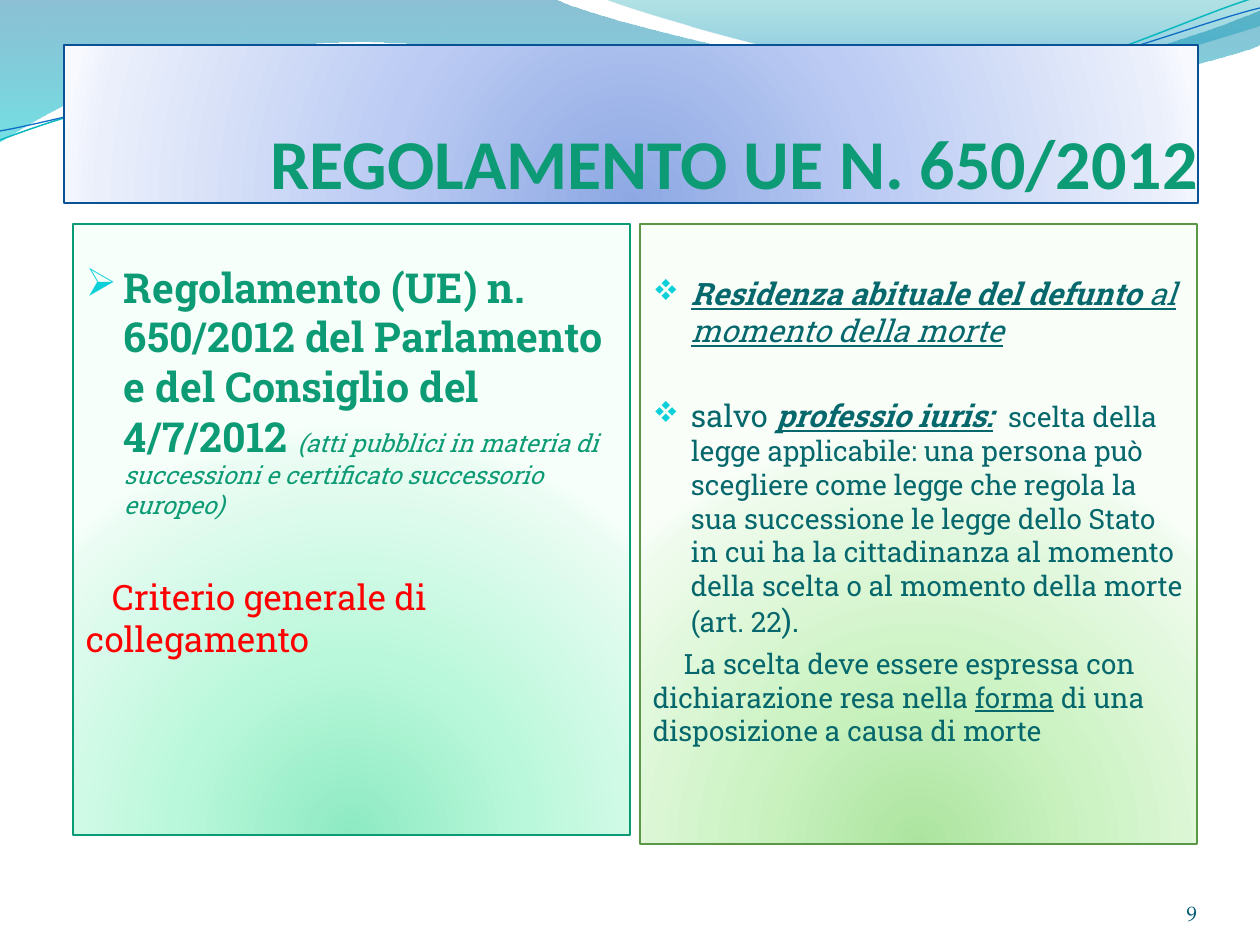
from lxml.etree import SubElement
from pptx import Presentation
from pptx.dml.color import RGBColor
from pptx.enum.shapes import MSO_SHAPE
from pptx.enum.text import MSO_ANCHOR as ANCHOR, PP_ALIGN as ALIGN
from pptx.oxml.ns import qn
from pptx.util import Pt

PX = 914400 / 126
BULLET_INDENT = 38

COLORS = {"title": "0C9B74", "body": "06686C", "alert": "FF0000",
          "number": "045D75", "bullet": "0BD0D9"}
SLAB = "Roboto Slab"
ARROW, DIAMONDS = "Ø", "v"  # Wingdings characters

# Gradient stops: position %, colour, opacity %
# Parts: a straight line (x, y) or a cubic curve (x1, y1, x2, y2, x, y)
WAVES = [
    {"start": (0, 0), "stops": [(0, "0074A1", 45), (100, "00C6CF", 55)],
     "parts": [(554, -1), (600, 21, 837, 79, 955, 79), (1075, 79, 1207, 33, 1260, 11),
               (1261, 45), (1239, 55, 1096, 96, 940, 95), (784, 95, 481, 35, 324, 43),
               (163, 45, 58, 105, -1, 142)]},
    {"start": (604, -1), "stops": [(0, "00A1A9", 30), (80, "008BBF", 45)],
     "parts": [(643, 15, 859, 78, 969, 82), (1079, 87, 1211, 40, 1260, 26), (1260, 0)]},
    {"start": (0, 140), "line": ("0AB8BF", 0.85),
     "parts": [(60, 117, 199, 72, 349, 66), (498, 59, 747, 112, 898, 101),
               (1050, 89, 1182, 19, 1257, -3)]},
    {"start": (0, 131), "line": ("0F6FC6", 0.75),
     "parts": [(59, 121, 207, 77, 357, 71), (508, 64, 752, 106, 903, 95),
               (1053, 84, 1186, 26, 1260, 8)]},
]

TITLE = {
    "box": (64, 45, 1134, 158), "line": "095295", "insets": (0, 6, 0, 0),
    "stops": [(0, "8DA8E3", 100), (43, "BBCBF3", 100), (93, "EAEFFB", 100), (100, "F7F9FF", 100)],
    "text": "REGOLAMENTO UE N. 650/2012",
}

# Runs: text, size in pt, style letters (b, i, u)
PANELS = [
    {"box": (73, 224, 557, 611), "line": "0A9B74", "insets": (13, 38, 13, 6),
     "stops": [(0, "8DEAC2", 100), (43, "BAF8DB", 100), (93, "EAFCF3", 100), (100, "F7FFFB", 100)],
     "paragraphs": [
         {"bullet": ARROW, "color": "title", "runs": [
             ("Regolamento (UE) n. 650/2012 del Parlamento e del Consiglio del 4/7/2012 ", 23.6, "b"),
             ("(atti pubblici in materia di successioni e certificato successorio europeo)", 14, "i")]},
         {"first": 26, "before": 32, "color": "alert", "runs": [
             ("Criterio generale di collegamento", 20, "")]},
     ]},
    {"box": (640, 224, 557, 620), "line": "5B9747", "insets": (13, 51, 13, 6),
     "stops": [(0, "ACE49F", 100), (43, "CDF3C4", 100), (93, "EFFBED", 100), (100, "F9FFF8", 100)],
     "paragraphs": [
         {"bullet": DIAMONDS, "color": "body", "runs": [
             ("Residenza abituale del defunto ", 17.6, "biu"),
             ("al momento della morte", 17.6, "iu")]},
         {"bullet": DIAMONDS, "before": 27.5, "color": "body", "runs": [
             ("salvo ", 17.6, ""), ("professio iuris:", 17.6, "biu"), ("  ", 17.6, "bi"),
             ("scelta della legge applicabile: una persona può scegliere come legge che "
              "regola la sua successione le legge dello Stato in cui ha la cittadinanza al "
              "momento della scelta o al momento della morte (art. 22", 16, ""),
             (").", 17.6, "")]},
         {"first": 31, "before": 4.5, "color": "body", "runs": [
             ("La scelta deve essere espressa con dichiarazione resa nella ", 16, ""),
             ("forma", 16, "u"), (" di una disposizione a causa di morte", 16, "")]},
     ]},
]

NUMBER = {"box": (1092, 876, 105, 50), "text": "9"}


def emu(px):
    return round(px * PX)


def rgb(hex_color):
    return RGBColor.from_string(hex_color)


def fill_gradient(shape, stops, circular):
    """Fill downwards, or in circles centred below the bottom edge."""
    shape.fill.gradient()
    gradient = shape._element.spPr.find(qn("a:gradFill"))
    for child in list(gradient):
        gradient.remove(child)
    stop_list = SubElement(gradient, qn("a:gsLst"))
    for position, color, opacity in stops:
        stop = SubElement(stop_list, qn("a:gs"), pos=str(position * 1000))
        tint = SubElement(stop, qn("a:srgbClr"), val=color)
        if opacity < 100:
            SubElement(tint, qn("a:alpha"), val=str(opacity * 1000))
    if circular:
        route = SubElement(gradient, qn("a:path"))
        route.set("path", "circle")
        SubElement(route, qn("a:fillToRect"), l="50000", t="130000", r="50000", b="-30000")
    else:
        SubElement(gradient, qn("a:lin"), ang="5400000", scaled="0")


def set_line(shape, color, width):
    shape.line.color.rgb = rgb(color)
    shape.line.width = Pt(width)


def bend_segments(shape, parts, origin):
    """Turn the straight segments of cubic parts into curves."""
    segments = list(shape._element.iter(qn("a:lnTo")))
    for segment, part in zip(segments, parts):
        if len(part) == 2:
            continue
        segment.tag = qn("a:cubicBezTo")
        for child in list(segment):
            segment.remove(child)
        for x, y in zip(part[::2], part[1::2]):
            SubElement(segment, qn("a:pt"), x=str(x - origin[0]), y=str(y - origin[1]))


def add_wave(slide, wave):
    ends = [part[-2:] for part in wave["parts"]]
    builder = slide.shapes.build_freeform(*wave["start"], scale=PX)
    builder.add_line_segments(ends, close="stops" in wave)
    shape = builder.convert_to_shape()
    origin = [min(values) for values in zip(wave["start"], *ends)]
    bend_segments(shape, wave["parts"], origin)
    shape.shadow.inherit = False
    if "stops" in wave:
        fill_gradient(shape, wave["stops"], circular=False)
        shape.line.fill.background()
    else:
        shape.fill.background()
        set_line(shape, *wave["line"])


def set_frame(shape, insets, anchor):
    frame = shape.text_frame
    frame.word_wrap = True
    frame.vertical_anchor = anchor
    (frame.margin_left, frame.margin_top,
     frame.margin_right, frame.margin_bottom) = map(emu, insets)
    return frame


def add_box(slide, box, anchor):
    shape = slide.shapes.add_shape(MSO_SHAPE.RECTANGLE, *map(emu, box["box"]))
    shape.shadow.inherit = False
    fill_gradient(shape, box["stops"], circular=True)
    set_line(shape, box["line"], 0.75)
    return set_frame(shape, box["insets"], anchor)


def write_label(frame, text, font, size, color, bold=False):
    paragraph = frame.paragraphs[0]
    paragraph.text = text
    paragraph.alignment = ALIGN.RIGHT
    paragraph.font.name, paragraph.font.size = font, Pt(size)
    paragraph.font.bold = bold
    paragraph.font.color.rgb = rgb(COLORS[color])


def write_paragraph(paragraph, content):
    paragraph.alignment = ALIGN.LEFT
    paragraph.space_before = Pt(content.get("before", 0))
    properties = paragraph._p.get_or_add_pPr()
    if "bullet" in content:
        properties.set("marL", str(emu(BULLET_INDENT)))
        properties.set("indent", str(-emu(BULLET_INDENT)))
        color = SubElement(properties, qn("a:buClr"))
        SubElement(color, qn("a:srgbClr"), val=COLORS["bullet"])
        SubElement(properties, qn("a:buSzPct"), val="95000")
        SubElement(properties, qn("a:buFont"), typeface="Wingdings", charset="2")
        SubElement(properties, qn("a:buChar"), char=content["bullet"])
    else:
        properties.set("indent", str(emu(content["first"])))
    paragraph.font.name = SLAB
    paragraph.font.color.rgb = rgb(COLORS[content["color"]])
    for text, size, style in content["runs"]:
        run = paragraph.add_run()
        run.text = text
        run.font.size = Pt(size)
        run.font.bold, run.font.italic, run.font.underline = (s in style for s in "biu")


def main():
    presentation = Presentation()
    presentation.slide_width, presentation.slide_height = emu(1260), emu(945)
    slide = presentation.slides.add_slide(presentation.slide_layouts[6])
    for wave in WAVES:
        add_wave(slide, wave)
    write_label(add_box(slide, TITLE, ANCHOR.BOTTOM), TITLE["text"], "Calibri", 40, "title", True)
    for panel in PANELS:
        frame = add_box(slide, panel, ANCHOR.TOP)
        for index, content in enumerate(panel["paragraphs"]):
            write_paragraph(frame.add_paragraph() if index else frame.paragraphs[0], content)
    number = slide.shapes.add_textbox(*map(emu, NUMBER["box"]))
    write_label(set_frame(number, (0, 0, 0, 0), ANCHOR.BOTTOM), NUMBER["text"],
                "TeX Gyre Pagella", 12, "number")
    presentation.save("out.pptx")


if __name__ == "__main__":
    main()
